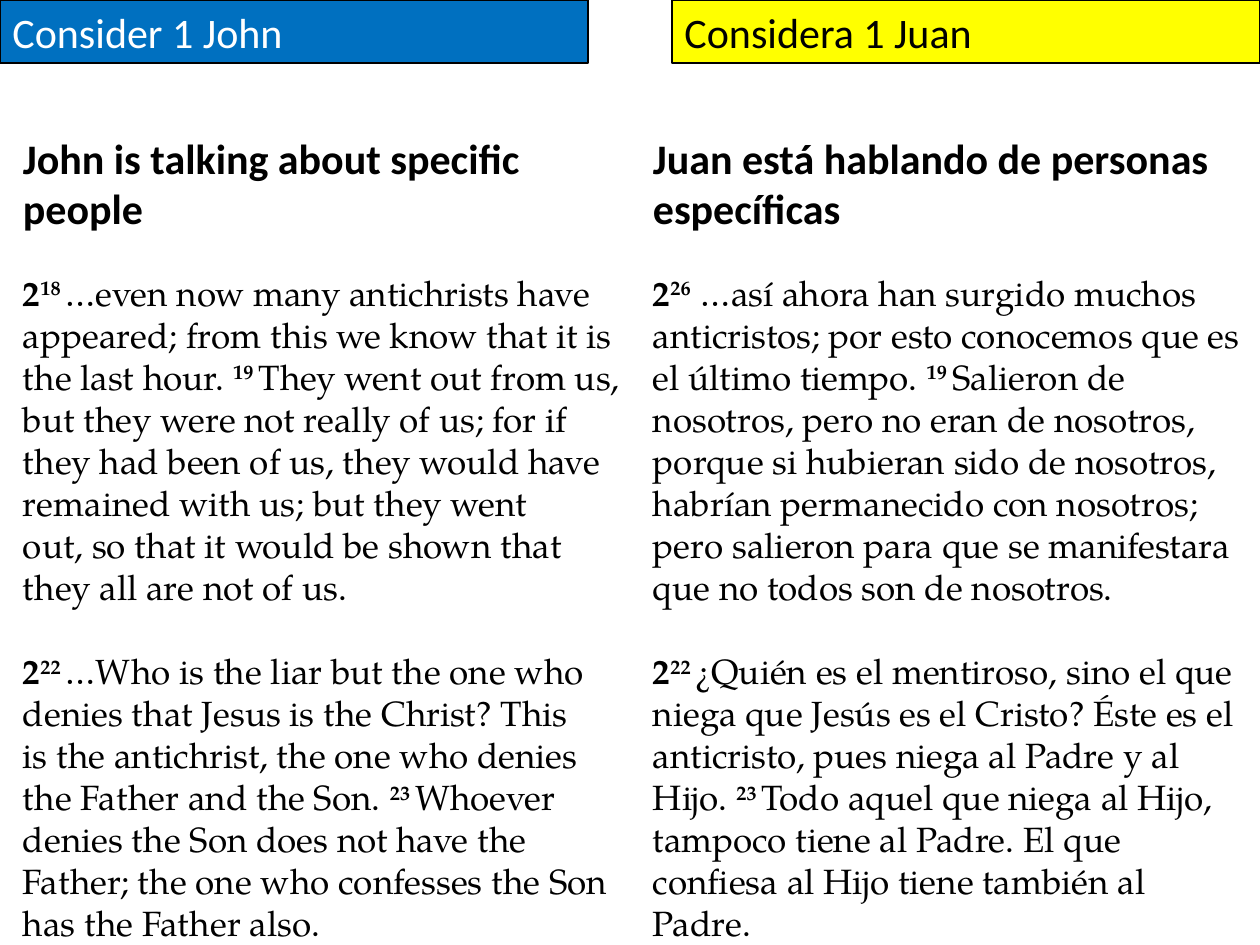
from pptx import Presentation
from pptx.dml.color import RGBColor
from pptx.enum.shapes import MSO_SHAPE
from pptx.enum.text import MSO_ANCHOR, PP_ALIGN
from pptx.util import Inches, Pt

RECTANGLE = MSO_SHAPE.RECTANGLE
MIDDLE = MSO_ANCHOR.MIDDLE
LEFT = PP_ALIGN.LEFT
HARD_SPACE = chr(160)
BLACK, WHITE, BLUE, YELLOW = "000000", "FFFFFF", "0070C0", "FFFF00"

ENGLISH_PASSAGES = [
    [
        ("18~", "…even now many antichrists have appeared; from this we know that it is the last hour.~"),
        ("19~", "They went out from us, but they were not~really~of us; for if they had been of us, "
                "they would have remained with us; but~they went out,~so that~it would be shown "
                "that they all are not of us."),
    ],
    [
        ("22 ", "…Who is the liar but~the one who denies that Jesus is the~Christ? This is~the "
                "antichrist, the one who denies the Father and the Son.~"),
        ("23~", "Whoever denies the Son does not have the Father; the one who confesses the Son "
                "has the Father also."),
    ],
]
SPANISH_PASSAGES = [
    [
        ("26~~", "…así ahora han surgido muchos anticristos; por esto conocemos que es el último tiempo.~"),
        ("19~", "Salieron de nosotros, pero no eran de nosotros, porque si hubieran sido de nosotros, "
                "habrían permanecido con nosotros; pero salieron para que se manifestara que no "
                "todos son de nosotros."),
    ],
    [
        ("22~", "¿Quién es el mentiroso, sino el que niega que Jesús es el Cristo? Éste es el "
                "anticristo, pues niega al Padre y al Hijo.~"),
        ("23~", "Todo aquel que niega al Hijo, tampoco tiene al Padre. El que confiesa al Hijo "
                "tiene también al Padre."),
    ],
]


def color(hex_string):
    return RGBColor.from_string(hex_string)


class BilingualSlide:
    heading_font, verse_font = "Calibri", "TeX Gyre Pagella"
    heading_size, verse_size = 24, 20
    passage_gaps = (22, 24)

    def __init__(self, presentation):
        self.width = presentation.slide_width
        self.height = presentation.slide_height
        self.slide = presentation.slides.add_slide(presentation.slide_layouts[6])

    def box(self, left, top, width, height):
        return (int(left * self.width), int(top * self.height),
                int(width * self.width), int(height * self.height))

    def format_run(self, run, font_name, size, text_color=BLACK, bold=False):
        run.font.name = font_name
        run.font.size = Pt(size)
        run.font.bold = bold
        run.font.color.rgb = color(text_color)

    def banner(self, left, text, fill, text_color):
        shape = self.slide.shapes.add_shape(RECTANGLE, *self.box(left, 0, 7 / 15, 1 / 15))
        shape.shadow.inherit = False
        shape.fill.solid()
        shape.fill.fore_color.rgb = color(fill)
        shape.line.color.rgb = color(BLACK)
        shape.line.width = Pt(0.75)
        shape.text_frame.text = text
        shape.text_frame.vertical_anchor = MIDDLE
        paragraph = shape.text_frame.paragraphs[0]
        paragraph.alignment = LEFT
        self.format_run(paragraph.runs[0], self.heading_font, self.heading_size, text_color)

    def passage_run(self, paragraph, text, bold=False, raised=False):
        run = paragraph.add_run()
        run.text = text.replace("~", HARD_SPACE)
        self.format_run(run, self.verse_font, self.verse_size, bold=bold)
        if raised:
            run.font._element.set("baseline", "30000")

    def column(self, left, width, heading, passages):
        shape = self.slide.shapes.add_textbox(*self.box(left, 2 / 15, width, 13 / 15))
        frame = shape.text_frame
        frame.word_wrap = True
        frame.text = heading
        self.format_run(frame.paragraphs[0].runs[0], self.heading_font, self.heading_size, bold=True)
        for gap, verses in zip(self.passage_gaps, passages):
            paragraph = frame.add_paragraph()
            paragraph.space_before = Pt(gap)
            self.passage_run(paragraph, "2", bold=True)
            for number, words in verses:
                self.passage_run(paragraph, number, bold=True, raised=True)
                self.passage_run(paragraph, words)


def main():
    presentation = Presentation()
    presentation.slide_width = Inches(10)
    presentation.slide_height = Inches(7.5)
    page = BilingualSlide(presentation)
    page.column(1 / 120, 0.505, "John is talking about specific people", ENGLISH_PASSAGES)
    page.banner(0, "Consider 1 John", BLUE, WHITE)
    page.banner(8 / 15, "Considera 1 Juan", YELLOW, BLACK)
    page.column(61 / 120, 59 / 120, "Juan está hablando de personas específicas", SPANISH_PASSAGES)
    presentation.save("out.pptx")


if __name__ == "__main__":
    main()
